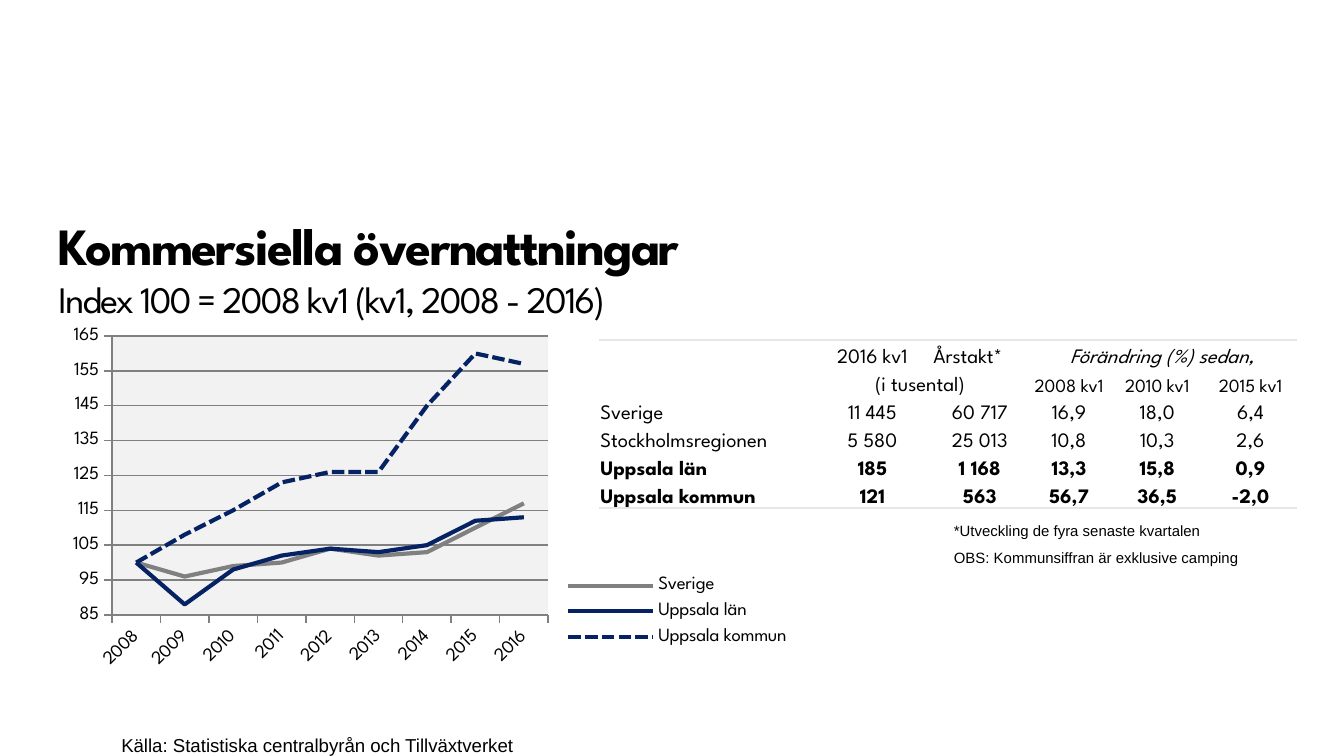
import pptx
import pptx.chart.data
import pptx.dml.color
import pptx.enum.chart
import pptx.enum.dml
import pptx.enum.text
import pptx.oxml
import pptx.oxml.ns
import pptx.util

Pt = pptx.util.Pt
RGBColor = pptx.dml.color.RGBColor
ANCHOR = pptx.enum.text.MSO_ANCHOR
ALIGN = pptx.enum.text.PP_ALIGN
DASH = pptx.enum.dml.MSO_LINE

BLACK = RGBColor(0x00, 0x00, 0x00)
RULE = RGBColor(0xE6, 0xE6, 0xE6)
PLOT = RGBColor(0xF2, 0xF2, 0xF2)
GRAY = RGBColor(0x80, 0x80, 0x80)
NAVY = RGBColor(0x05, 0x23, 0x64)
HEAD_FONT, NOTE_FONT = "League Spartan", "Arial"
MARGINS = ("margin_left", "margin_top", "margin_right", "margin_bottom")


def set_font(font, **values):
    font.color.rgb = BLACK
    for name, value in values.items():
        setattr(font, name, value)


def chart_xml(tag, inner):
    return pptx.oxml.parse_xml(f"<c:{tag} {pptx.oxml.ns.nsdecls('c', 'a')}>{inner}</c:{tag}>")


prs = pptx.Presentation()
prs.slide_width, prs.slide_height = Pt(720), Pt(405)
s = prs.slides.add_slide(prs.slide_layouts[6])

# Heading and notes: box, anchor, line spacing, lines of (text, font values)
note = {"name": NOTE_FONT, "size": Pt(8)}
texts = [
    ((31.3, 114.5, 586, 57.6), ANCHOR.BOTTOM, None, [
        ("Kommersiella övernattningar", {"name": HEAD_FONT, "size": Pt(28), "bold": True}),
        ("Index 100 = 2008 kv1 (kv1, 2008 - 2016)", {"name": HEAD_FONT, "size": Pt(20)})]),
    ((65, 381.3, 230, 23.7), ANCHOR.TOP, Pt(24), [
        ("Källa: Statistiska centralbyrån och Tillväxtverket",
         {"name": NOTE_FONT, "size": Pt(10)})]),
    ((511, 274.6, 180, 30), ANCHOR.TOP, 1.5, [
        ("*Utveckling de fyra senaste kvartalen", note),
        ("OBS: Kommunsiffran är exklusive camping", note)]),
]
for box, anchor, spacing, lines in texts:
    tf = s.shapes.add_textbox(*map(Pt, box)).text_frame
    tf.word_wrap, tf.vertical_anchor = True, anchor
    for side in MARGINS:
        setattr(tf, side, 0)
    for i, (text, values) in enumerate(lines):
        p = tf.paragraphs[0] if i == 0 else tf.add_paragraph()
        p.line_spacing = spacing
        r = p.add_run()
        r.text = text
        set_font(r.font, **values)
        if values["name"] == HEAD_FONT:
            r.font._element.set("spc", "-90")

# Table
rows = [
    ["", "2016 kv1", "Årstakt*", "Förändring (%) sedan,", "", ""],
    ["", "(i tusental)", "", "2008 kv1", "2010 kv1", "2015 kv1"],
    ["Sverige", "11 445", "60 717", "16,9", "18,0", "6,4"],
    ["Stockholmsregionen", "5 580", "25 013", "10,8", "10,3", "2,6"],
    ["Uppsala län", "185", "1 168", "13,3", "15,8", "0,9"],
    ["Uppsala kommun", "121", "563", "56,7", "36,5", "-2,0"],
]
widths = [114.5, 64, 51, 44.6, 50, 50]
table = s.shapes.add_table(6, 6, Pt(320.9), Pt(182.2), Pt(sum(widths)), Pt(90)).table
table.first_row = table.horz_banding = False
for column, width in zip(table.columns, widths):
    column.width = Pt(width)
for i, row in enumerate(rows):
    table.rows[i].height = Pt(15)
    for j, text in enumerate(row):
        cell = table.cell(i, j)
        cell.vertical_anchor = ANCHOR.BOTTOM
        for side, margin in zip(MARGINS, (0.7, 0.7, 0.7, 0)):
            setattr(cell, side, Pt(margin))
        p = cell.text_frame.paragraphs[0]
        p.alignment = ALIGN.LEFT if j == 0 or (i, j) == (0, 2) else ALIGN.CENTER
        values = {"name": HEAD_FONT, "size": Pt(10 if i == 1 and j > 2 else 11),
                  "bold": i > 3, "italic": (i, j) == (0, 3)}
        set_font(p.font, **values)
        if text:
            r = p.add_run()
            r.text = text
            set_font(r.font, **values)
        tc_pr = cell._tc.get_or_add_tcPr()
        for tag in ("lnL", "lnR", "lnT", "lnB"):
            ruled = (i, tag) in ((0, "lnT"), (5, "lnB"))
            fill = f'<a:solidFill><a:srgbClr val="{RULE}"/></a:solidFill>' if ruled else "<a:noFill/>"
            tc_pr.append(pptx.oxml.parse_xml(
                f'<a:{tag} {pptx.oxml.ns.nsdecls("a")} w="12700">{fill}</a:{tag}>'))
        cell.fill.background()
table.cell(0, 3).merge(table.cell(0, 5))
table.cell(1, 1).merge(table.cell(1, 2))

# Chart
series = [
    ("Sverige", [100, 96, 99, 100, 104, 102, 103, 110, 117], GRAY, DASH.SOLID),
    ("Uppsala län", [100, 88, 98, 102, 104, 103, 105, 112, 113], NAVY, DASH.SOLID),
    ("Uppsala kommun", [100, 108, 115, 123, 126, 126, 145, 160, 157], NAVY, DASH.SQUARE_DOT),
]
data = pptx.chart.data.CategoryChartData()
data.categories = [str(year) for year in range(2008, 2017)]
for name, values, _, _ in series:
    data.add_series(name, values)
chart = s.shapes.add_chart(pptx.enum.chart.XL_CHART_TYPE.LINE, Pt(32.3), Pt(172.4),
                           Pt(396), Pt(191.6), data).chart
chart.has_title = False
set_font(chart.font, name=HEAD_FONT, size=Pt(10))
chart.plots[0].vary_by_categories = False
for line, (_, _, color, dash) in zip(chart.plots[0].series, series):
    line.smooth = False
    line.marker.style = pptx.enum.chart.XL_MARKER_STYLE.NONE
    line.format.line.color.rgb = color
    line.format.line.width = Pt(2.25)
    line.format.line.dash_style = dash

axis = chart.value_axis
for name, value in {"minimum_scale": 85, "maximum_scale": 165, "major_unit": 10,
                    "has_major_gridlines": True}.items():
    setattr(axis, name, value)
axis.tick_labels.number_format = "0"
axis.tick_labels.number_format_is_linked = False
set_font(chart.category_axis.tick_labels.font, name=HEAD_FONT, size=Pt(10))
chart.category_axis._element.txPr.bodyPr.set("rot", "-2700000")
for line in (axis.format.line, axis.major_gridlines.format.line, chart.category_axis.format.line):
    line.color.rgb = GRAY
    line.width = Pt(0.75)
for ax in (axis, chart.category_axis):
    ax.major_tick_mark = pptx.enum.chart.XL_TICK_MARK.OUTSIDE

chart.has_legend = True
chart.legend.position = pptx.enum.chart.XL_LEGEND_POSITION.RIGHT
chart.legend.include_in_layout = False
plot_area = chart._chartSpace.chart.plotArea
legend = chart.legend._element
for parent, target, (x, y, w, h) in ((plot_area, "inner", (0.07, 0.04, 0.59, 0.78)),
                                     (legend, None, (0.68, 0.69, 0.31, 0.24))):
    for old in parent.findall(pptx.oxml.ns.qn("c:layout")):
        parent.remove(old)
    inner = f'<c:layoutTarget val="{target}"/>' if target else ""
    inner += '<c:xMode val="edge"/><c:yMode val="edge"/>'
    inner += "".join(f'<c:{k} val="{v}"/>' for k, v in zip("xywh", (x, y, w, h)))
    layout = chart_xml("layout", f"<c:manualLayout>{inner}</c:manualLayout>")
    parent.insert(0 if target else 1, layout)
plot_area.append(chart_xml(
    "spPr", f'<a:solidFill><a:srgbClr val="{PLOT}"/></a:solidFill><a:ln><a:noFill/></a:ln>'))

prs.save("out.pptx")
